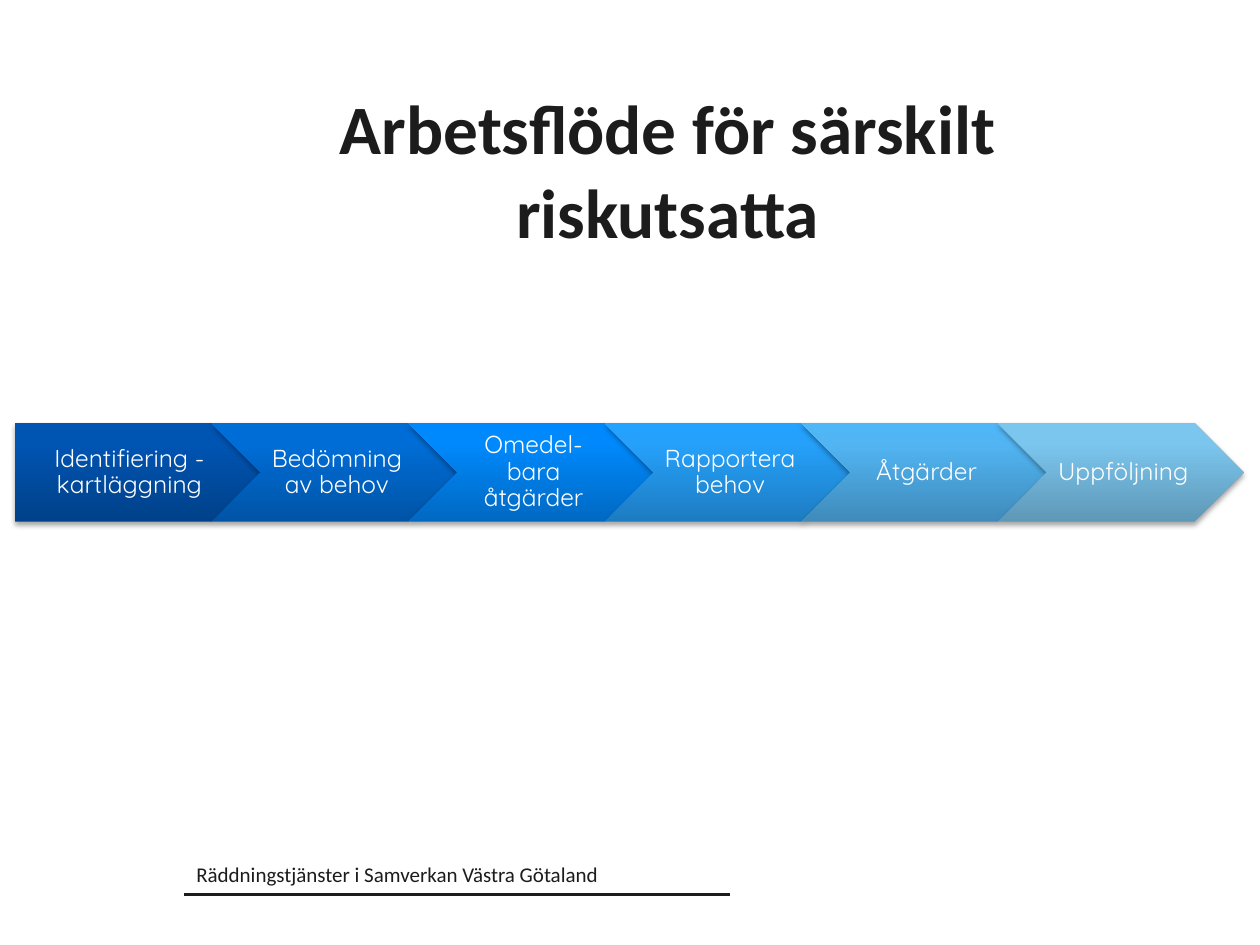
"""Builds a one-slide process flow of six chevron steps."""
import copy

import pptx
import pptx.dml.color
import pptx.enum.shapes
import pptx.enum.text
import pptx.oxml
import pptx.oxml.ns
import pptx.util
from pptx.util import Inches, Pt

SHAPE = pptx.enum.shapes.MSO_SHAPE
ALIGN = pptx.enum.text.PP_ALIGN
ANCHOR = pptx.enum.text.MSO_ANCHOR
DARK, WHITE = "1C1C1C", "FFFFFF"
SHADOW = (
    '<a:effectLst %s><a:outerShdw blurRad="40000" dist="23000" dir="5400000" rotWithShape="0">'
    '<a:srgbClr val="000000"><a:alpha val="35000"/></a:srgbClr></a:outerShdw></a:effectLst>'
    % pptx.oxml.ns.nsdecls("a")
)
STEP_LEFT, STEP_TOP, STEP_W, STEP_H, STEP_PITCH = 0.12, 3.36, 1.95, 0.78, 1.56
STEPS = [
    ("Identifiering - kartläggning", ("004189", "0054B2", "0055B3")),
    ("Bedömning av behov", ("0054A6", "006DD7", "006ED8")),
    ("Omedel-bara åtgärder", ("0069C2", "0089FC", "0089FD")),
    ("Rapportera behov", ("1D7CC1", "25A1FB", "23A2FF")),
    ("Åtgärder", ("3F8BBB", "52B5F3", "4FB6F7")),
    ("Uppföljning", ("5F98B7", "7BC6EE", "7AC7F1")),
]


def rgb(value):
    return pptx.dml.color.RGBColor.from_string(value)


class Deck:
    def __init__(self, body_font, step_font):
        self.body_font, self.step_font = body_font, step_font
        self.prs = pptx.Presentation()
        self.prs.slide_width, self.prs.slide_height = Inches(10), Inches(7.5)
        self.s = self.prs.slides.add_slide(self.prs.slide_layouts[5])

    def style(self, p, font, size, color, align, bold=False):
        p.alignment = align
        p.font.name, p.font.size, p.font.bold = font, Pt(size), bold
        p.font.color.rgb = rgb(color)

    def title(self, text, x, y, w, h):
        sp = self.s.shapes.title
        sp.left, sp.top, sp.width, sp.height = map(Inches, (x, y, w, h))
        tf = sp.text_frame
        tf.text = text
        tf.word_wrap = True
        tf.auto_size = pptx.enum.text.MSO_AUTO_SIZE.NONE
        tf.vertical_anchor = ANCHOR.TOP
        self.style(tf.paragraphs[0], self.body_font, 39.6, DARK, ALIGN.CENTER, True)

    def text(self, text, x, y, w, h):
        tf = self.s.shapes.add_textbox(*map(Inches, (x, y, w, h))).text_frame
        tf.text = text
        tf.word_wrap = True
        self.style(tf.paragraphs[0], self.body_font, 12, DARK, ALIGN.LEFT)

    def line(self, x1, y1, x2, y2):
        c = self.s.shapes.add_connector(
            pptx.enum.shapes.MSO_CONNECTOR.STRAIGHT, *map(Inches, (x1, y1, x2, y2)))
        c.line.color.rgb, c.line.width = rgb(DARK), Pt(1.5)
        c._element.spPr.append(pptx.oxml.parse_xml("<a:effectLst %s/>" % pptx.oxml.ns.nsdecls("a")))

    def step(self, kind, text, colors, x, y, w, h, inset):
        sp = self.s.shapes.add_shape(kind, *map(Inches, (x, y, w, h)))
        sp.line.fill.background()
        sp.fill.gradient()
        sp.fill.gradient_angle = 90
        stops = sp._element.spPr.find(pptx.oxml.ns.qn("a:gradFill")).gsLst
        stops.append(copy.deepcopy(stops[-1]))
        for stop, color, position in zip(sp.fill.gradient_stops, colors, (0, 0.8, 1)):
            stop.color.rgb, stop.position = rgb(color), position
        sp._element.spPr.append(pptx.oxml.parse_xml(SHADOW))
        tf = sp.text_frame
        tf.text = text
        tf.word_wrap = True
        tf.vertical_anchor = ANCHOR.MIDDLE
        tf.margin_left, tf.margin_right = Inches(inset), Inches(0.02)
        tf.margin_top = tf.margin_bottom = Inches(0.04)
        tf.paragraphs[0].line_spacing = 0.9
        self.style(tf.paragraphs[0], self.step_font, 14, WHITE, ALIGN.CENTER)


def main():
    deck = Deck("Calibri", "Quicksand")
    deck.line(1.46, 7.1, 5.79, 7.1)
    deck.text("Räddningstjänster i Samverkan Västra Götaland", 1.46, 6.79, 3.64, 0.3)
    deck.title("Arbetsflöde för särskilt riskutsatta", 1.45, 0.63, 7.7, 1.25)
    for i, (text, colors) in enumerate(STEPS):
        kind, inset = (SHAPE.CHEVRON, 0.06) if i else (SHAPE.PENTAGON, 0.08)
        deck.step(kind, text, colors, STEP_LEFT + i * STEP_PITCH, STEP_TOP, STEP_W, STEP_H, inset)
    deck.prs.save("out.pptx")


if __name__ == "__main__":
    main()
